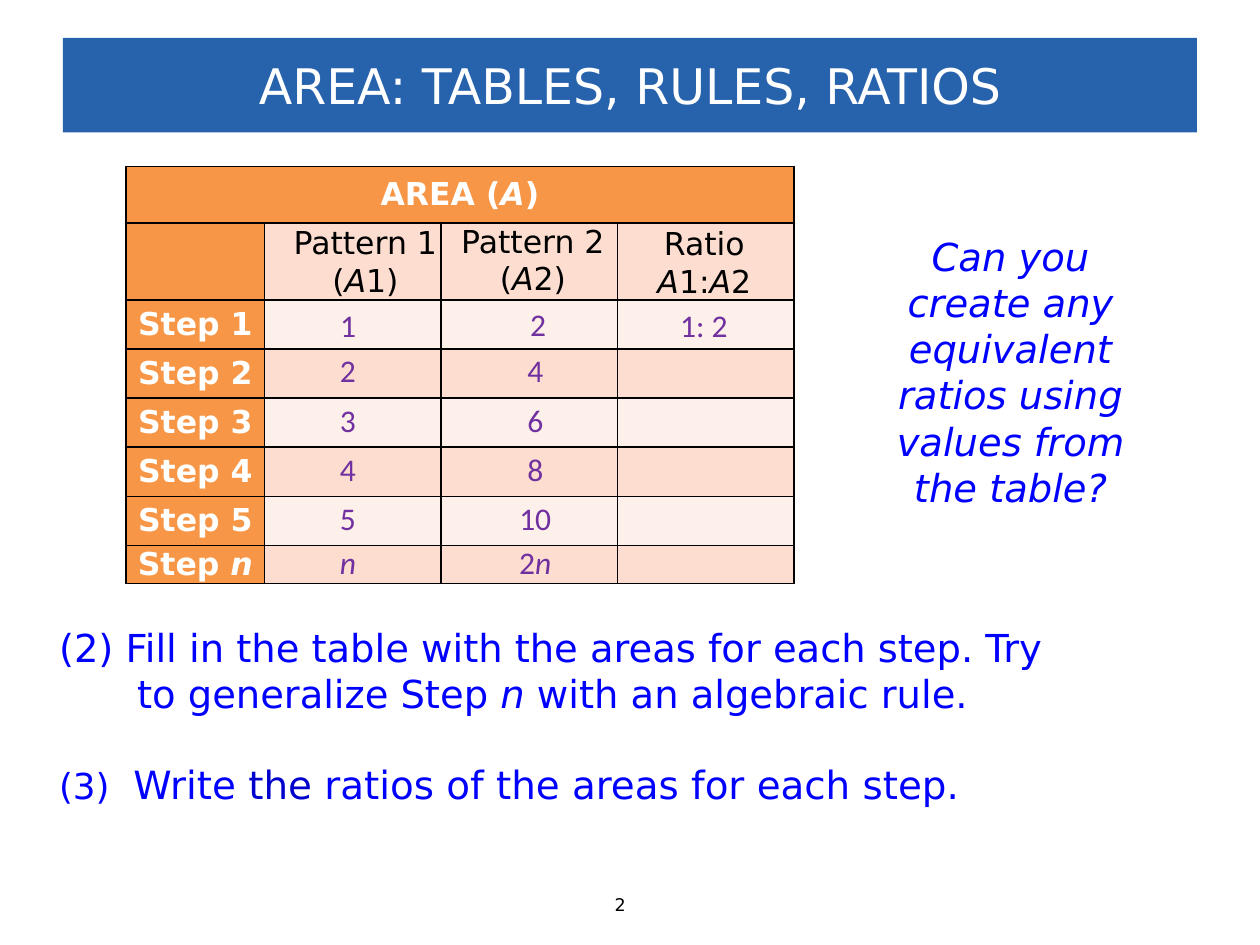
from lxml import etree
from pptx import Presentation
from pptx.dml.color import RGBColor
from pptx.enum.shapes import MSO_SHAPE as Shape
from pptx.enum.text import MSO_ANCHOR as Anchor, MSO_AUTO_SIZE as AutoSize, PP_ALIGN as Align
from pptx.oxml.ns import qn
from pptx.util import Inches, Pt

BODY, NUMERIC = "DejaVu Sans", "Calibri"
BLUE, DARK_BLUE, PURPLE = "0000FF", "0000CC", "7030A0"
BANNER, ORANGE, PEACH, CREAM = "2762AD", "F79646", "FCDDCF", "FDEFE9"
BLACK, WHITE = "000000", "FFFFFF"


def rgb(value):
    return RGBColor.from_string(value)


class SlideBuilder:
    """Holds the text style and the current slide."""

    def __init__(self, slide, font=BODY, size=18):
        self.slide, self.font, self.size = slide, font, size

    def add_words(self, paragraph, words, color, size=None, font=None, bold=False,
                  italic=False, align=Align.LEFT):
        """Append words to a paragraph; *stars* mark italics."""
        paragraph.alignment = align
        for index, piece in enumerate(words.split("*")):
            if not piece:
                continue
            run = paragraph.add_run()
            run.text = piece
            run.font.name = font or self.font
            run.font.size = Pt(size or self.size)
            run.font.bold = bold
            run.font.italic = italic or index % 2 == 1
            run.font.color.rgb = rgb(color)

    def text(self, left, top, width, height, lines, color, wrap=True, grow=False,
             hanging=0, center_tab=0, **style):
        box = self.slide.shapes.add_textbox(
            Inches(left), Inches(top), Inches(width), Inches(height))
        frame = box.text_frame
        frame.word_wrap = wrap
        frame.auto_size = AutoSize.SHAPE_TO_FIT_TEXT if grow else AutoSize.NONE
        for index, line in enumerate(lines):
            paragraph = frame.add_paragraph() if index else frame.paragraphs[0]
            properties = paragraph._p.get_or_add_pPr()
            if hanging:
                properties.set("marL", str(Inches(hanging)))
                properties.set("indent", str(-Inches(hanging)))
            if center_tab:
                tabs = etree.SubElement(properties, qn("a:tabLst"))
                etree.SubElement(tabs, qn("a:tab"), pos=str(Inches(center_tab)), algn="ctr")
            self.add_words(paragraph, line, color, **style)
        return frame

    def banner(self, left, top, width, height, title):
        bar = self.slide.shapes.add_shape(
            Shape.RECTANGLE, Inches(left), Inches(top), Inches(width), Inches(height))
        bar.shadow.inherit = False
        bar.fill.solid()
        bar.fill.fore_color.rgb = rgb(BANNER)
        bar.line.fill.background()
        bar.text_frame.vertical_anchor = Anchor.MIDDLE
        self.add_words(bar.text_frame.paragraphs[0], title, WHITE, size=28,
                       align=Align.CENTER)

    def table(self, left, top, columns, rows):
        frame = self.slide.shapes.add_table(
            len(rows), len(columns), Inches(left), Inches(top),
            Inches(sum(columns)), Inches(sum(rows)))
        grid = frame.table
        grid.first_row = grid.horz_banding = False
        for column, width in zip(grid.columns, columns):
            column.width = Inches(width)
        for row, height in zip(grid.rows, rows):
            row.height = Inches(height)
        return grid

    def cell(self, cell, fill, label=""):
        cell.margin_left = cell.margin_right = Inches(0.07)
        cell.margin_top = cell.margin_bottom = 0
        cell.vertical_anchor = Anchor.MIDDLE
        properties = cell._tc.get_or_add_tcPr()
        for side in ("a:lnL", "a:lnR", "a:lnT", "a:lnB"):
            border = etree.SubElement(properties, qn(side), w=str(Pt(1)))
            paint = etree.SubElement(border, qn("a:solidFill"))
            etree.SubElement(paint, qn("a:srgbClr"), val=BLACK)
        cell.fill.solid()
        cell.fill.fore_color.rgb = rgb(fill)
        if label:
            self.add_words(cell.text_frame.paragraphs[0], label, WHITE, bold=True,
                           align=Align.CENTER)


def main():
    deck = Presentation()
    deck.slide_width, deck.slide_height = Inches(10), Inches(7.5)
    builder = SlideBuilder(deck.slides.add_slide(deck.slide_layouts[6]))

    # Title and page number
    builder.banner(0.5, 0.3, 9, 0.75, "AREA: TABLES, RULES, RATIOS")
    builder.text(4.78, 7.05, 0.44, 0.27, ["2"], BLACK, wrap=False, grow=True, size=10)

    # Area table
    row_labels = ["AREA (*A*)", "", *(f"Step {n}" for n in range(1, 6)), "Step* n*"]
    area_table = builder.table(1, 1.32, [1.1] + [1.4] * 3, [0.45, 0.61] + [0.39] * 5 + [0.29])
    for row, label in enumerate(row_labels):
        band = ORANGE if row == 0 else PEACH if row % 2 else CREAM
        for column in range(4):
            builder.cell(area_table.cell(row, column), band if column else ORANGE,
                         "" if column else label)
    area_table.cell(0, 0).merge(area_table.cell(0, 3))

    # Column headings
    for left, top, width, heading in [
        (2.21, 1.72, 1.38, ["Pattern 1", "(*A*1)"]),
        (3.43, 1.71, 1.6, ["Pattern 2", "(*A*2)"]),
        (4.95, 1.73, 1.28, ["Ratio", "*A*1:*A*2"]),
    ]:
        builder.text(left, top, width, 0.71, heading, BLACK, grow=True, align=Align.CENTER)

    # Values of the first step
    for left, top, width, value in [
        (2.6, 2.38, 0.38, "1"), (4.11, 2.37, 0.38, "2"), (5.3, 2.38, 0.68, "1: 2"),
    ]:
        builder.text(left, top, width, 0.4, [value], PURPLE, grow=True, font=NUMERIC)

    # Values of the other steps, both patterns on one line
    step_values = [(2.74 + 0.39 * i, f"{i + 2}\t{2 * (i + 2)}") for i in range(4)]
    for top, values in step_values + [(4.26, "*n*\t2*n*")]:
        builder.text(2.6, top, 2.23, 0.4, [values], PURPLE, grow=True,
                     center_tab=1.55, font=NUMERIC)

    # Question beside the table
    builder.text(6.89, 1.8, 2.26, 2.44,
                 ["Can you create any equivalent ratios using values from the table?"],
                 BLUE, size=22, italic=True, align=Align.CENTER)

    # Tasks
    builder.text(0.37, 4.9, 8.09, 1.03,
                 ["(2) Fill in the table with the areas for each step. Try to generalize "
                  "Step *n *with an algebraic rule."], BLUE, hanging=0.62, size=22)
    ratio_task = builder.text(0.37, 5.99, 7.85, 0.52, ["(3)\t"], BLUE, hanging=0.59, size=20.4)
    for words, color in [("Write ", BLUE), ("the", DARK_BLUE),
                         (" ratios of the areas for each step.", BLUE)]:
        builder.add_words(ratio_task.paragraphs[0], words, color, size=22.2)

    deck.save("out.pptx")


if __name__ == "__main__":
    main()
